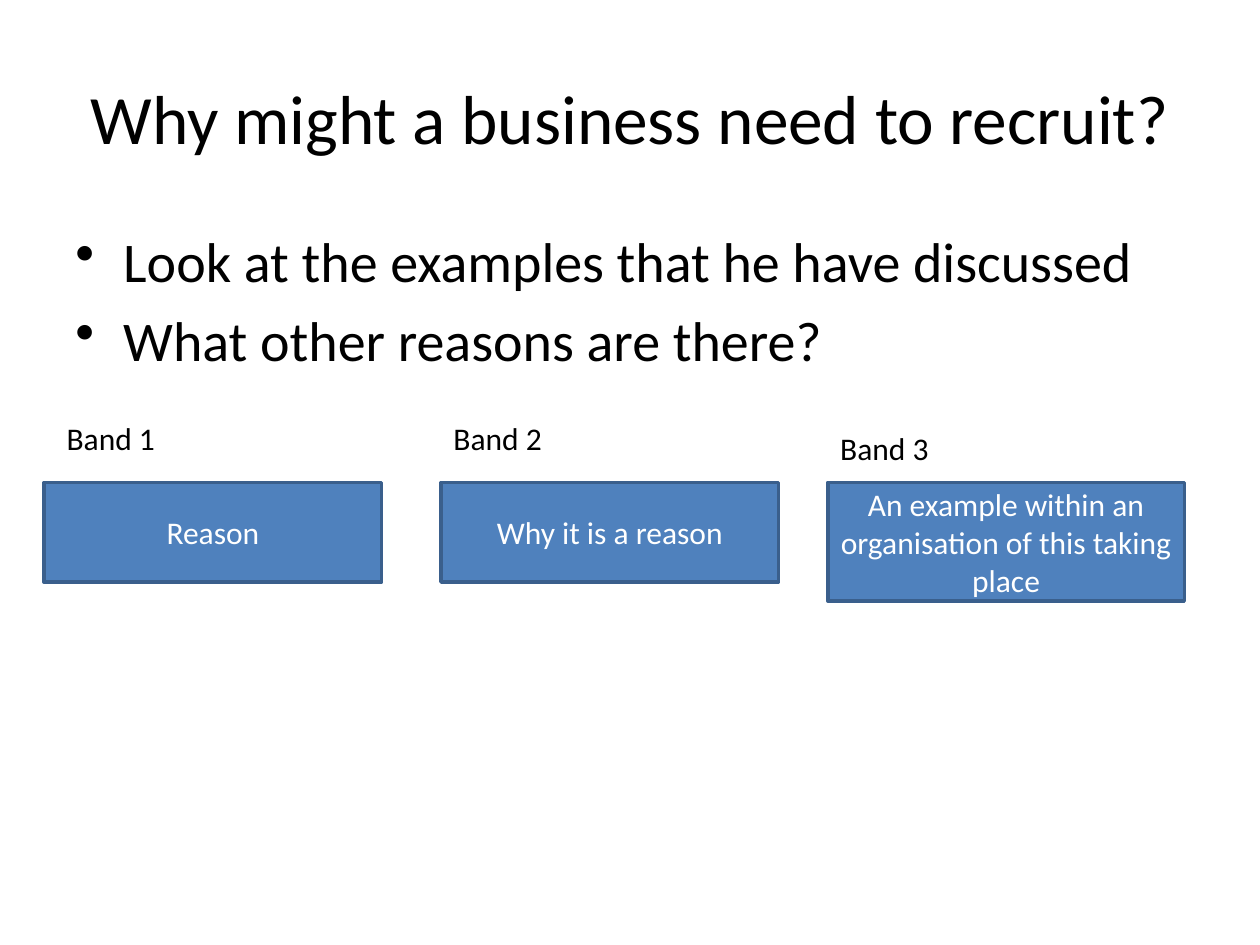
from dataclasses import dataclass

import pptx
import pptx.dml.color
import pptx.enum.shapes
import pptx.enum.text
import pptx.oxml.ns
import pptx.util
from lxml import etree
from pptx.shapes.autoshape import Shape
from pptx.slide import Slide

ALIGN = pptx.enum.text.PP_ALIGN
ANCHOR = pptx.enum.text.MSO_ANCHOR
WIDTH = pptx.util.Inches(10)
HEIGHT = pptx.util.Inches(7.5)
COLUMN = WIDTH / 100
ROW = HEIGHT / 75


@dataclass(frozen=True)
class Theme:
    font: str = "Calibri"
    ink: str = "000000"
    paper: str = "FFFFFF"
    card: str = "4F81BD"
    card_edge: str = "3A5F8C"
    title_size: float = 39.6
    bullet_size: float = 32
    band_size: float = 18
    edge_width: float = 2


@dataclass(frozen=True)
class Area:
    column: float
    row: float
    columns: float
    rows: float

    def box(self) -> tuple[int, int, int, int]:
        return (round(self.column * COLUMN), round(self.row * ROW),
                round(self.columns * COLUMN), round(self.rows * ROW))


@dataclass(frozen=True)
class Band:
    label: str
    task: str
    label_area: Area
    card_area: Area


THEME = Theme()
TITLE = "Why might a business need to recruit?"
QUESTIONS = ("Look at the examples that he have discussed", "What other reasons are there?")
BANDS = (
    Band("Band 1", "Reason", Area(4.3, 32.8, 26.8, 4), Area(3.5, 38.3, 26.8, 7.9)),
    Band("Band 2", "Why it is a reason", Area(35, 32.8, 26.8, 4), Area(35, 38.3, 26.8, 7.9)),
    Band("Band 3", "An example within an organisation of this taking place",
         Area(65.7, 33.6, 26.8, 4), Area(65.7, 38.3, 28.3, 9.4)),
)


def rgb(value: str) -> pptx.dml.color.RGBColor:
    return pptx.dml.color.RGBColor.from_string(value)


def write(holder: Shape, lines: tuple[str, ...], size: float, color: str,
          align: ALIGN = ALIGN.LEFT, anchor: ANCHOR = ANCHOR.TOP) -> None:
    frame = holder.text_frame
    frame.word_wrap = True
    frame.vertical_anchor = anchor
    frame.text = "\n".join(lines)
    for paragraph in frame.paragraphs:
        paragraph.alignment = align
        paragraph.font.name = THEME.font
        paragraph.font.size = pptx.util.Pt(size)
        paragraph.font.color.rgb = rgb(color)


def add_bullets(holder: Shape) -> None:
    indent = pptx.util.Inches(0.38)
    for paragraph in holder.text_frame.paragraphs:
        paragraph.space_before = pptx.util.Pt(THEME.bullet_size * 0.2)
        properties = paragraph._p.get_or_add_pPr()
        properties.set("marL", str(indent))
        properties.set("indent", str(-indent))
        bullet = etree.Element(pptx.oxml.ns.qn("a:buChar"), char="•")
        properties.find(pptx.oxml.ns.qn("a:spcBef")).addnext(bullet)


def draw_band(slide: Slide, band: Band) -> None:
    card = slide.shapes.add_shape(pptx.enum.shapes.MSO_SHAPE.RECTANGLE, *band.card_area.box())
    card.shadow.inherit = False
    card.fill.solid()
    card.fill.fore_color.rgb = rgb(THEME.card)
    card.line.color.rgb = rgb(THEME.card_edge)
    card.line.width = pptx.util.Pt(THEME.edge_width)
    write(card, (band.task,), THEME.band_size, THEME.paper, ALIGN.CENTER, ANCHOR.MIDDLE)

    label = slide.shapes.add_textbox(*band.label_area.box())
    write(label, (band.label,), THEME.band_size, THEME.ink)
    label.text_frame.auto_size = pptx.enum.text.MSO_AUTO_SIZE.SHAPE_TO_FIT_TEXT


def main() -> None:
    deck = pptx.Presentation()
    deck.slide_width, deck.slide_height = WIDTH, HEIGHT
    slide = deck.slides.add_slide(deck.slide_layouts[6])
    slide.background.fill.solid()
    slide.background.fill.fore_color.rgb = rgb(THEME.paper)

    title = slide.shapes.add_textbox(*Area(5, 3, 90, 12.5).box())
    write(title, (TITLE,), THEME.title_size, THEME.ink, ALIGN.CENTER, ANCHOR.MIDDLE)

    questions = slide.shapes.add_textbox(*Area(5, 17.5, 90, 49.5).box())
    write(questions, QUESTIONS, THEME.bullet_size, THEME.ink)
    add_bullets(questions)

    for band in BANDS:
        draw_band(slide, band)
    deck.save("out.pptx")


if __name__ == "__main__":
    main()
